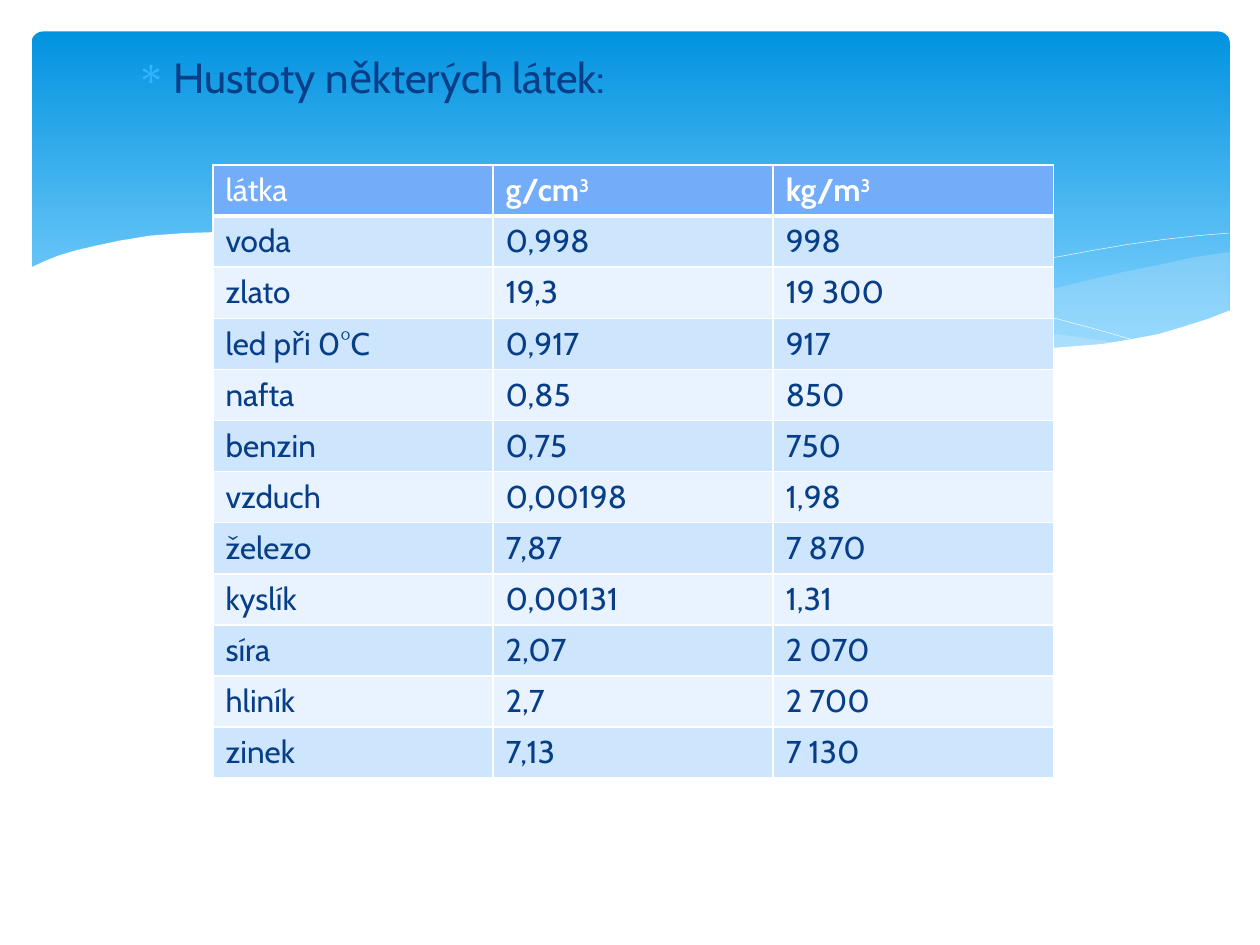
from lxml import etree
from pptx import Presentation
from pptx.dml.color import RGBColor
from pptx.enum.shapes import MSO_SHAPE
from pptx.enum.text import PP_ALIGN
from pptx.oxml.ns import qn
from pptx.util import Inches, Pt

ROUND_RECT = MSO_SHAPE.ROUNDED_RECTANGLE
LEFT, JUSTIFY = PP_ALIGN.LEFT, PP_ALIGN.JUSTIFY

WHITE, NAVY, HEADER, MIST = "FFFFFF", "073E87", "73ACF8", "C6E7FC"
BANDS = ("CEE5FE", "E8F3FF")

RIGHT_WAVE = [
    (9.76, 2), (9.48, 2.04), (9.21, 2.1), (8.91, 2.16), (8.61, 2.23), (8.05, 2.37),
    (7.53, 2.48), (7.06, 2.57), (6.61, 2.65), (6.91, 2.69), (7.19, 2.72), (7.45, 2.75),
    (7.69, 2.77), (8.03, 2.78), (8.35, 2.77), (8.63, 2.75), (8.89, 2.72), (9.13, 2.67),
    (9.35, 2.62), (9.49, 2.57), (9.63, 2.52), (9.76, 2.47)]
LONG_WAVE = [
    (8.93, 2.73), (8.66, 2.69), (8.37, 2.65), (8.07, 2.6), (7.75, 2.54), (7.41, 2.47),
    (7.06, 2.4), (6.68, 2.31), (6.29, 2.22), (5.98, 2.14), (5.69, 2.08), (5.41, 2.03),
    (5.14, 1.98), (4.89, 1.94), (4.42, 1.89), (3.99, 1.86), (3.61, 1.85), (3.28, 1.87),
    (2.86, 1.91), (3.23, 1.96), (3.62, 2.03), (4.04, 2.11), (4.49, 2.22), (4.91, 2.32),
    (5.3, 2.4), (5.66, 2.48), (6.01, 2.55), (6.34, 2.61), (6.65, 2.66), (6.95, 2.7),
    (7.22, 2.74), (7.48, 2.76), (7.85, 2.78), (8.28, 2.78), (8.57, 2.77), (8.76, 2.75)]
FALLING_LINE = [
    (3.09, 1.95), (3.28, 1.92), (3.53, 1.89), (3.87, 1.87), (4.16, 1.87), (4.5, 1.88),
    (4.89, 1.9), (5.33, 1.94), (5.82, 2), (6.36, 2.08), (6.95, 2.19), (7.6, 2.33),
    (7.95, 2.41), (8.31, 2.51), (8.69, 2.61), (9.07, 2.72)]
RISING_LINE = [
    (6.13, 2.57), (6.53, 2.46), (6.95, 2.35), (7.48, 2.23), (8.06, 2.1), (8.66, 1.99),
    (8.95, 1.94), (9.24, 1.9), (9.51, 1.87), (9.75, 1.85)]
WHITE_WAVE = [
    (9.77, 2.46), (9.59, 2.53), (9.4, 2.59), (9.2, 2.65), (8.99, 2.69), (8.75, 2.73),
    (8.5, 2.75), (8.23, 2.77), (7.93, 2.76), (7.61, 2.75), (7.26, 2.72), (6.88, 2.68),
    (6.48, 2.62), (6.03, 2.54), (5.55, 2.45), (5.03, 2.33), (4.47, 2.2), (4.18, 2.13),
    (3.91, 2.07), (3.65, 2.02), (3.4, 1.97), (3.16, 1.94), (2.92, 1.9), (2.71, 1.88),
    (2.5, 1.86), (2.3, 1.85), (2.11, 1.84), (1.77, 1.84), (1.46, 1.85), (1.19, 1.87),
    (0.95, 1.91), (0.76, 1.95), (0.59, 1.99), (0.46, 2.03), (0.36, 2.07), (0.23, 2.13),
    (0.23, 3.29), (9.77, 3.29)]

UNITS = ("g/cm", "kg/m")
DENSITIES = [
    ("voda", "0,998", "998"),
    ("zlato", "19,3", "19 300"),
    ("led při 0°C", "0,917", "917"),
    ("nafta", "0,85", "850"),
    ("benzin", "0,75", "750"),
    ("vzduch", "0,00198", "1,98"),
    ("železo", "7,87", "7 870"),
    ("kyslík", "0,00131", "1,31"),
    ("síra", "2,07", "2 070"),
    ("hliník", "2,7", "2 700"),
    ("zinek", "7,13", "7 130"),
]


def rgb(color):
    return RGBColor.from_string(color)


def add_xml(parent, tag, **attrs):
    return etree.SubElement(parent, qn(tag), attrs)


class SlideBuilder:
    font = "Cabin"

    def __init__(self, slide):
        self.slide = slide

    def banner(self, x, y, w, h, top, bottom):
        sp = self.slide.shapes.add_shape(
            ROUND_RECT, Inches(x), Inches(y), Inches(w), Inches(h))
        sp.adjustments[0] = 0.034
        sp.shadow.inherit = False
        sp.line.fill.background()
        sp.fill.gradient()
        sp.fill.gradient_angle = 270
        for stop, color, pos in zip(sp.fill.gradient_stops, (top, bottom), (0, 0.9)):
            stop.color.rgb = rgb(color)
            stop.position = pos

    def outline(self, points, closed):
        pts = [(Inches(x), Inches(y)) for x, y in points]
        fb = self.slide.shapes.build_freeform(*pts[0])
        fb.add_line_segments(pts[1:], close=closed)
        sp = fb.convert_to_shape()
        sp.shadow.inherit = False
        return sp

    def wave(self, points, color, opacity=100):
        sp = self.outline(points, True)
        sp.line.fill.background()
        sp.fill.solid()
        sp.fill.fore_color.rgb = rgb(color)
        if opacity < 100:
            clr = sp.fill._xPr.find(".//" + qn("a:srgbClr"))
            add_xml(clr, "a:alpha", val=str(opacity * 1000))

    def curve(self, points, color):
        sp = self.outline(points, False)
        sp.fill.background()
        sp.line.color.rgb = rgb(color)
        sp.line.width = Pt(0.25)

    def run(self, p, text, size, color, bold=False, superscript=False):
        r = p.add_run()
        r.text = text
        r.font.name = self.font
        r.font.size = Pt(size)
        r.font.bold = bold
        r.font.color.rgb = rgb(color)
        if superscript:
            r.font._element.set("baseline", "30000")

    def bullet_text(self, x, y, w, h, text):
        tf = self.slide.shapes.add_textbox(
            Inches(x), Inches(y), Inches(w), Inches(h)).text_frame
        tf.word_wrap = True
        p = tf.paragraphs[0]
        p.space_before = Pt(4.8)
        pPr = p._p.get_or_add_pPr()
        pPr.set("marL", str(Inches(0.3)))
        pPr.set("indent", str(-Inches(0.3)))
        add_xml(add_xml(pPr, "a:buClr"), "a:srgbClr", val="31B6FD")
        add_xml(pPr, "a:buChar", char="∗")
        self.run(p, text, 24, NAVY)

    def table(self, x, y, w, h, rows, cols):
        table = self.slide.shapes.add_table(
            rows, cols, Inches(x), Inches(y), Inches(w), Inches(h)).table
        table.first_row = table.horz_banding = False
        return table

    def cell(self, cell, runs, fill, align=LEFT, top=1, bottom=1):
        """Fill a cell; runs are (text, colour, bold, superscript)."""
        tcPr = cell._tc.get_or_add_tcPr()
        for side, width in (("L", 1), ("R", 1), ("T", top), ("B", bottom)):
            ln = add_xml(tcPr, "a:ln" + side, w=str(Pt(width)))
            add_xml(add_xml(ln, "a:solidFill"), "a:srgbClr", val=WHITE)
        cell.fill.solid()
        cell.fill.fore_color.rgb = rgb(fill)
        p = cell.text_frame.paragraphs[0]
        p.alignment = align
        for text, color, bold, superscript in runs:
            self.run(p, text, 18, color, bold, superscript)


def main():
    prs = Presentation()
    prs.slide_width, prs.slide_height = Inches(10), Inches(7.5)
    s = SlideBuilder(prs.slides.add_slide(prs.slide_layouts[6]))

    s.banner(0.25, 0.25, 9.51, 2.7, "0293E0", "83D3FE")
    s.wave(RIGHT_WAVE, MIST, 29)
    s.wave(LONG_WAVE, MIST, 40)
    s.curve(FALLING_LINE, WHITE)
    s.curve(RISING_LINE, WHITE)
    s.wave(WHITE_WAVE, WHITE)
    s.bullet_text(0.98, 0.36, 8.1, 6.29, "Hustoty některých látek:")

    table = s.table(1.69, 1.31, 6.67, 4.87, len(DENSITIES) + 1, 3)
    headings = [[("látka", WHITE, False, False)]]
    headings += [[(unit, WHITE, True, False), ("3", WHITE, True, True)] for unit in UNITS]
    for col, runs in enumerate(headings):
        s.cell(table.cell(0, col), runs, HEADER, JUSTIFY, bottom=3)
    for row, values in enumerate(DENSITIES, 1):
        for col, value in enumerate(values):
            s.cell(table.cell(row, col), [(value, NAVY, False, False)],
                   BANDS[(row - 1) % 2], top=3 if row == 1 else 1)

    prs.save("out.pptx")


if __name__ == "__main__":
    main()
